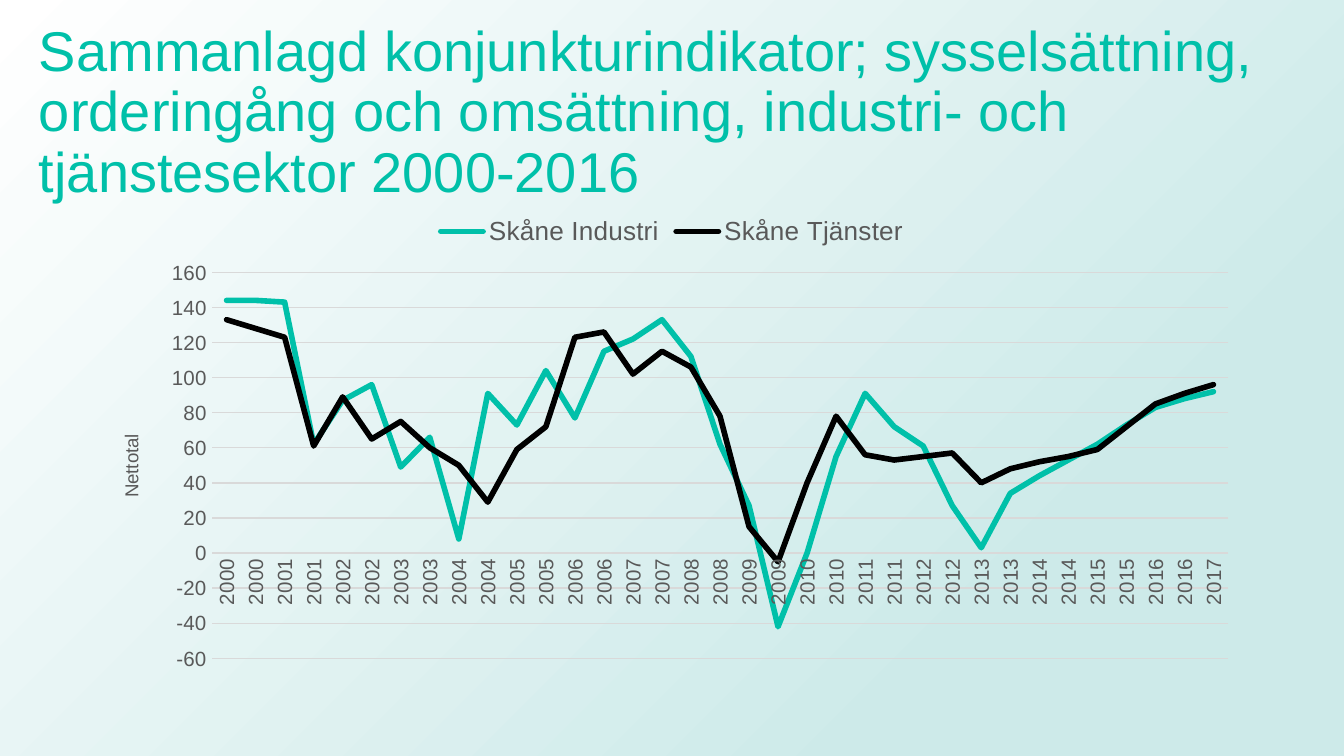
import pptx
import pptx.util
import pptx.chart.data
import pptx.dml.color
import pptx.enum.chart
import pptx.enum.shapes
import pptx.enum.text
import pptx.oxml
import pptx.oxml.ns

Inches, Pt = pptx.util.Inches, pptx.util.Pt
enum = pptx.enum
TEAL, BLACK, GREY, PALE = "00C0A9", "000000", "595959", "D9D9D9"

YEARS = [str(2000 + i // 2) for i in range(35)]
SERIES = {
    "Skåne Industri": (TEAL, [
        144, 144, 143, 62, 87, 96, 49, 66, 8, 91, 73, 104, 77, 115, 122, 133, 112, 62,
        27, -42, 0, 55, 91, 72, 61, 27, 3, 34, 44, 53, 62, 73, 83, 88, 92]),
    "Skåne Tjänster": (BLACK, [
        133, 128, 123, 61, 89, 65, 75, 60, 50, 29, 59, 72, 123, 126, 102, 115, 106, 78,
        15, -5, 40, 78, 56, 53, 55, 57, 40, 48, 52, 55, 59, 72, 85, 91, 96]),
}


def paint(color, code):
    color.rgb = pptx.dml.color.RGBColor.from_string(code)


def put(item, **vals):
    for name, val in vals.items():
        setattr(item, name, val)


def style(font, size, code):
    put(font, name="Arial", size=Pt(size), bold=False)
    paint(font.color, code)


def stroke(line, code, width):
    paint(line.color, code)
    line.width = Pt(width)


def node(body):
    """Parse a piece of XML with the drawing and chart prefixes."""
    head, tail = body.split(">", 1)
    names = pptx.oxml.ns.nsdecls("a", "c")
    return pptx.oxml.parse_xml(f"{head} {names}>{tail}")


def layout(mode="", **sides):
    """Manual layout, with sides as shares of the chart area."""
    parts = "".join(f'<c:{k}Mode val="edge"/>' for k in sides if k in "xy")
    parts += "".join(f'<c:{k} val="{v}"/>' for k, v in sides.items())
    return node(f"<c:layout><c:manualLayout>{mode}{parts}</c:manualLayout></c:layout>")


def back(slide, deck):
    rect = slide.shapes.add_shape(enum.shapes.MSO_SHAPE.RECTANGLE, 0, 0,
                                  deck.slide_width, deck.slide_height)
    rect.shadow.inherit = False
    rect.line.fill.background()
    fill = node(
        '<a:gradFill><a:gsLst>'
        '<a:gs pos="23000"><a:srgbClr val="CDEAE9"/></a:gs>'
        '<a:gs pos="100000"><a:srgbClr val="FFFFFF"/></a:gs></a:gsLst>'
        '<a:path path="circle"><a:fillToRect l="100000" t="100000"/></a:path>'
        '</a:gradFill>')
    rect.element.spPr.find(pptx.oxml.ns.qn("a:prstGeom")).addnext(fill)
    slide.shapes.title.element.addprevious(rect.element)


def title(slide, text):
    box = slide.shapes.title
    put(box, left=Inches(0.19), top=Inches(0.3), width=Inches(10.02), height=Inches(1.09))
    put(box.text_frame, text=text, word_wrap=True,
        auto_size=enum.text.MSO_AUTO_SIZE.NONE,
        vertical_anchor=enum.text.MSO_ANCHOR.MIDDLE)
    para = box.text_frame.paragraphs[0]
    put(para, alignment=enum.text.PP_ALIGN.LEFT, line_spacing=0.9)
    style(para.runs[0].font, 30, TEAL)


def axes(chart):
    years, total = chart.category_axis, chart.value_axis
    none = enum.chart.XL_TICK_MARK.NONE
    for axis in (years, total):
        put(axis, major_tick_mark=none, minor_tick_mark=none)
        style(axis.tick_labels.font, 11, GREY)
    stroke(years.format.line, PALE, 0.75)
    put(total, minimum_scale=-60, maximum_scale=160, major_unit=20, has_major_gridlines=True)
    put(total.tick_labels, number_format="0", number_format_is_linked=False)
    total.format.line.fill.background()
    stroke(total.major_gridlines.format.line, PALE, 0.75)
    frame = total.axis_title.text_frame
    frame.text = "Nettotal"
    style(frame.paragraphs[0].runs[0].font, 10, GREY)


def graph(slide):
    data = pptx.chart.data.CategoryChartData()
    data.categories = YEARS
    for name, (_, vals) in SERIES.items():
        data.add_series(name, vals)
    chart = slide.shapes.add_chart(
        enum.chart.XL_CHART_TYPE.LINE, Inches(0.69), Inches(1.5),
        Inches(8.62), Inches(3.56), data).chart
    put(chart, has_title=False, has_legend=True)
    style(chart.font, 10, BLACK)
    chart.plots[0].vary_by_categories = False

    # Lines
    for line in chart.plots[0].series:
        put(line, smooth=False)
        line.marker.style = enum.chart.XL_MARKER_STYLE.NONE
        stroke(line.format.line, SERIES[line.name][0], 3)

    # Legend and axes
    put(chart.legend, position=enum.chart.XL_LEGEND_POSITION.TOP, include_in_layout=False)
    style(chart.legend.font, 14, GREY)
    axes(chart)

    # Round line ends, upright text and fixed places
    root = chart.element
    for line in root.xpath("//c:ser/c:spPr/a:ln"):
        line.set("cap", "rnd")
        line.append(node("<a:round></a:round>"))
    for body in root.xpath("//c:catAx/c:txPr/a:bodyPr | //c:valAx/c:title//a:bodyPr"):
        body.set("rot", "-5400000")
        body.set("vert", "horz")
    for old in root.xpath("//c:plotArea/c:layout | //c:valAx/c:title/c:layout"):
        old.getparent().remove(old)
    inner = '<c:layoutTarget val="inner"/>'
    root.xpath("//c:plotArea")[0].insert(0, layout(inner, x=0.103, y=0.148, w=0.877, h=0.807))
    root.xpath("//c:valAx/c:title/c:tx")[0].addnext(layout(x=0.02, y=0.48))


def main():
    # A 16:9 slide, ten inches wide
    deck = pptx.Presentation()
    put(deck, slide_width=Inches(10), slide_height=Inches(10 * 9 / 16))
    slide = deck.slides.add_slide(deck.slide_layouts[5])
    back(slide, deck)
    title(slide, "Sammanlagd konjunkturindikator; sysselsättning, orderingång och "
                 "omsättning, industri- och tjänstesektor 2000-2016")
    graph(slide)
    deck.save("out.pptx")


if __name__ == "__main__":
    main()
